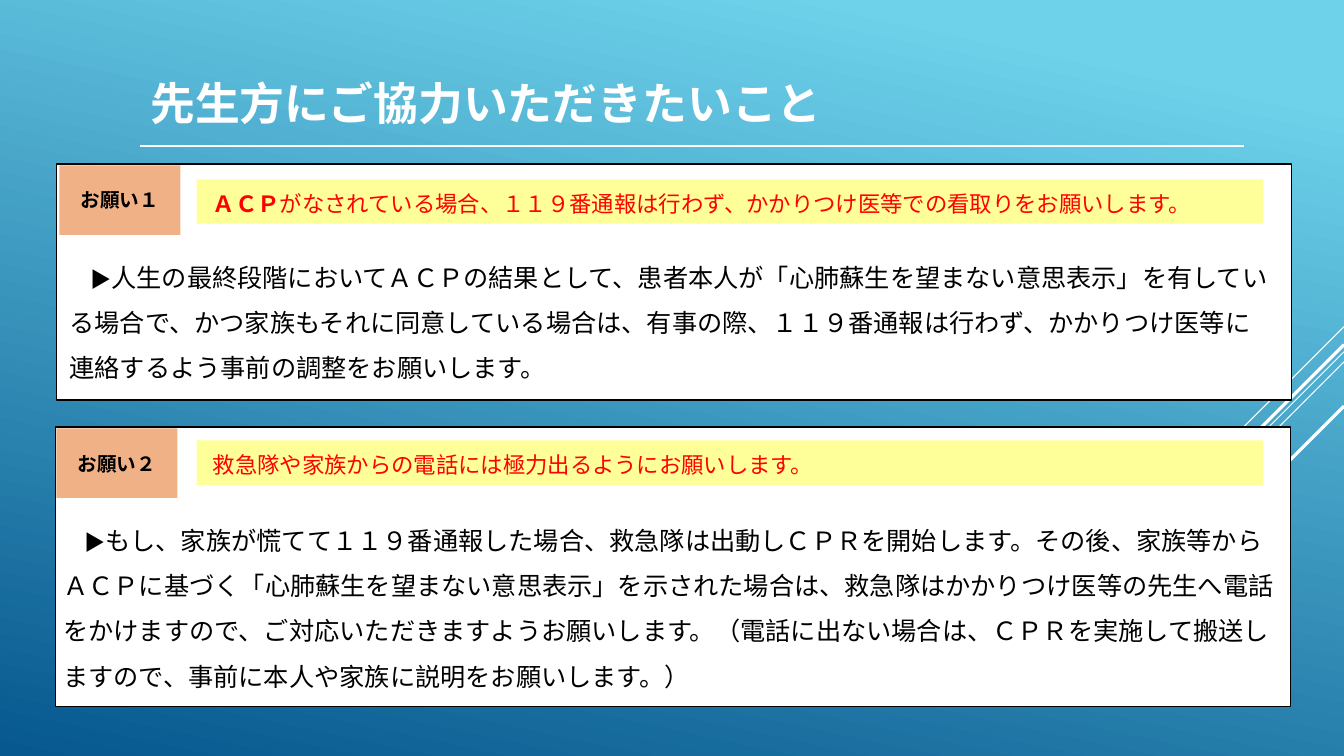
from pptx import Presentation
from pptx.dml.color import RGBColor
from pptx.enum.shapes import MSO_CONNECTOR as CONN, MSO_SHAPE as SHAPE
from pptx.enum.text import MSO_ANCHOR as ANCHOR, PP_ALIGN as ALIGN
from pptx.oxml.ns import qn
from pptx.util import Inches, Pt

WHITE = RGBColor(0xFF, 0xFF, 0xFF)
BLACK = RGBColor(0, 0, 0)
RED = RGBColor(0xFF, 0, 0)
YELLOW = RGBColor(0xFF, 0xFF, 0x99)
ORANGE = RGBColor(0xF1, 0xB1, 0x87)
SKY = RGBColor(0x6E, 0xD2, 0xEB)
NAVY = RGBColor(0x06, 0x58, 0x8E)
NOTO, SPARTAN = "Noto Sans CJK JP", "League Spartan"

WIDTH, HEIGHT = 13.33, 7.5
TITLE = "先生方にご協力いただきたいこと"
STRIPES = [(3.24, 1, 0.75), (3.49, 3.26, 0.75), (3.59, 2.07, 0.75),
           (3.42, 1.91, 2.25), (4.03, 1.39, 2.25)]
BANNER_X, BANNER_W, BANNER_H = 1.95, 10.58, 0.44
TAG_W, TAG_H = 1.2, 0.69
REQUESTS = [
    {"tag": "お願い１", "box": (0.56, 1.63, 12.25, 2.34), "tag_x": 0.59,
     "banner_y": 1.78, "body_at": (0.59, 2.4, 12.1, 1.78),
     "bold": "ＡＣＰ",
     "banner": "がなされている場合、１１９番通報は行わず、かかりつけ医等での看取りをお願いします。",
     "body": "人生の最終段階においてＡＣＰの結果として、患者本人が「心肺蘇生を望まない意思表示」を"
             "有している場合で、かつ家族もそれに同意している場合は、有事の際、１１９番通報は行わず、"
             "かかりつけ医等に連絡するよう事前の調整をお願いします。"},
    {"tag": "お願い２", "box": (0.55, 4.24, 12.25, 2.77), "tag_x": 0.56,
     "banner_y": 4.37, "body_at": (0.53, 5.01, 12.22, 2.23),
     "bold": "",
     "banner": "救急隊や家族からの電話には極力出るようにお願いします。",
     "body": "もし、家族が慌てて１１９番通報した場合、救急隊は出動しＣＰＲを開始します。その後、"
             "家族等からＡＣＰに基づく「心肺蘇生を望まない意思表示」を示された場合は、救急隊は"
             "かかりつけ医等の先生へ電話をかけますので、ご対応いただきますようお願いします。"
             "（電話に出ない場合は、ＣＰＲを実施して搬送しますので、事前に本人や家族に説明を"
             "お願いします。）"},
]


def add_run(p, text, size, color, bold=False, font=NOTO):
    r = p.add_run()
    r.text = text
    r.font.size, r.font.bold, r.font.name = Pt(size), bold, font
    r.font.color.rgb = color
    ea = r.font._element.makeelement(qn("a:ea"), {"typeface": NOTO})
    r.font._element.find(qn("a:latin")).addnext(ea)


def add_line(s, x1, y1, x2, y2, width):
    sp = s.shapes.add_connector(CONN.STRAIGHT, *map(Inches, (x1, y1, x2, y2)))
    sp.line.color.rgb, sp.line.width = WHITE, Pt(width)
    sp_pr = sp._element.spPr
    sp_pr.append(sp_pr.makeelement(qn("a:effectLst"), {}))


def add_rect(s, at, fill, border=None):
    sp = s.shapes.add_shape(SHAPE.RECTANGLE, *map(Inches, at))
    sp.shadow.inherit = False
    sp.fill.solid()
    sp.fill.fore_color.rgb = fill
    if border is None:
        sp.line.fill.background()
    else:
        sp.line.color.rgb, sp.line.width = border, Pt(1.25)
    tf = sp.text_frame
    tf.word_wrap, tf.vertical_anchor = True, ANCHOR.MIDDLE
    return tf.paragraphs[0]


def add_request(s, req):
    box_y = req["box"][1]
    add_rect(s, req["box"], WHITE, BLACK)

    p = add_rect(s, (req["tag_x"], box_y + 0.01, TAG_W, TAG_H), ORANGE)
    p.alignment = ALIGN.CENTER
    add_run(p, req["tag"], 14, BLACK, True)

    p = add_rect(s, (BANNER_X, req["banner_y"], BANNER_W, BANNER_H), YELLOW)
    p.alignment = ALIGN.LEFT
    add_run(p, " ", 20, RED, True)
    if req["bold"]:
        add_run(p, req["bold"], 16, RED, True)
    add_run(p, req["banner"], 16, RED)

    tf = s.shapes.add_textbox(*map(Inches, req["body_at"])).text_frame
    tf.word_wrap = True
    p = tf.paragraphs[0]
    p.line_spacing = 1.5
    add_run(p, "　▶", 15, BLACK)
    add_run(p, req["body"], 18, BLACK, font=SPARTAN)


def main():
    prs = Presentation()
    prs.slide_width, prs.slide_height = Inches(WIDTH), Inches(HEIGHT)
    s = prs.slides.add_slide(prs.slide_layouts[5])

    fill = s.background.fill
    fill.gradient()
    fill.gradient_angle = 360 - 102
    for stop, color, position in zip(fill.gradient_stops, (SKY, NAVY), (0.1, 1)):
        stop.color.rgb, stop.position = color, position

    for y, reach, width in STRIPES:
        add_line(s, WIDTH, y, WIDTH - reach, y + reach, width)

    title = s.shapes.title
    title.left, title.top, title.width, title.height = map(Inches, (1.39, 0.67, 11.13, 0.69))
    tf = title.text_frame
    tf.word_wrap, tf.vertical_anchor = True, ANCHOR.MIDDLE
    p = tf.paragraphs[0]
    p.alignment = ALIGN.LEFT
    add_run(p, TITLE, 32, WHITE, True)
    add_line(s, 1.39, 1.45, 12.34, 1.45, 1.25)

    for req in REQUESTS:
        add_request(s, req)
    prs.save("out.pptx")


if __name__ == "__main__":
    main()
